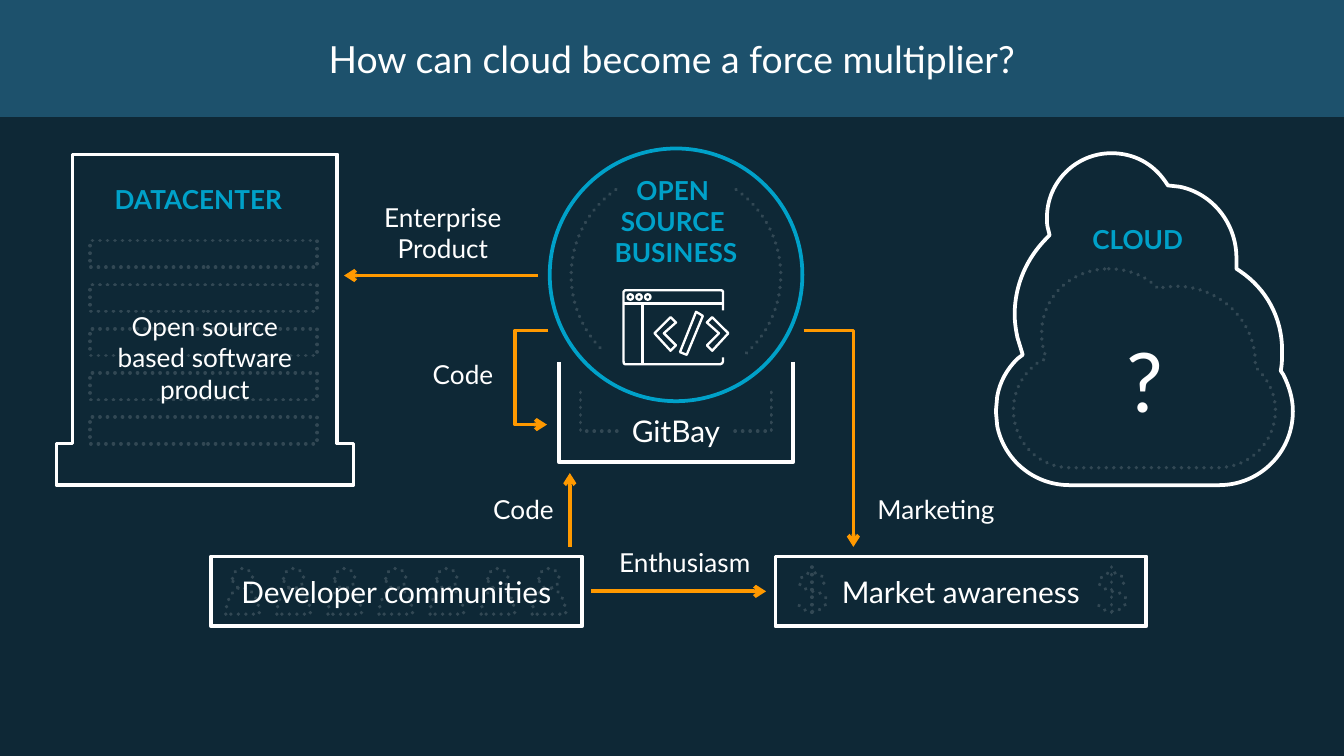
from lxml.etree import SubElement
from pptx import Presentation
from pptx.dml.color import RGBColor
from pptx.enum.dml import MSO_LINE
from pptx.enum.shapes import MSO_CONNECTOR, MSO_SHAPE
from pptx.enum.text import MSO_ANCHOR, PP_ALIGN
from pptx.oxml.ns import qn
from pptx.util import Cm, Pt

COLORS = {
    "background": "0E2836",
    "banner": "1D516C",
    "white": "FFFFFF",
    "blue": "00A1C9",
    "orange": "FF9900",
    "dots": "324854",
}
FONT = "Lato"
DEFAULT_INSETS = (0.1, 0.05, 0.1, 0.05)

# Outlines: a pair is a corner, six numbers are two controls and an end point.
CLOUD = [
    (8.27, 1.14), (8.44, 1.14, 8.58, 1.22, 8.67, 1.35), (8.69, 1.38), (8.78, 1.39),
    (9.02, 1.44, 9.2, 1.66, 9.2, 1.92), (9.2, 2), (9.23, 2.02),
    (9.42, 2.15, 9.54, 2.36, 9.54, 2.61), (9.54, 2.66, 9.54, 2.71, 9.53, 2.76),
    (9.55, 2.79), (9.59, 2.87, 9.62, 2.96, 9.62, 3.06),
    (9.62, 3.37, 9.37, 3.61, 9.07, 3.61), (7.96, 3.61),
    (7.69, 3.61, 7.47, 3.42, 7.42, 3.17), (7.41, 3.06), (7.42, 2.95),
    (7.44, 2.84, 7.49, 2.75, 7.57, 2.67), (7.61, 2.64), (7.57, 2.51),
    (7.56, 2.46, 7.55, 2.4, 7.55, 2.34), (7.55, 2.12, 7.64, 1.92, 7.79, 1.77),
    (7.81, 1.75), (7.8, 1.71), (7.79, 1.68, 7.79, 1.65, 7.79, 1.62),
    (7.79, 1.35, 8.01, 1.14, 8.27, 1.14),
]
INNER_CLOUD = [
    (8.25, 2), (8.39, 2, 8.52, 2.05, 8.61, 2.14), (8.62, 2.15), (8.63, 2.14),
    (8.67, 2.14, 8.71, 2.13, 8.75, 2.13), (9.08, 2.13, 9.34, 2.39, 9.34, 2.7),
    (9.34, 2.73), (9.36, 2.75), (9.44, 2.83, 9.49, 2.94, 9.49, 3.05),
    (9.49, 3.29, 9.3, 3.48, 9.06, 3.48), (7.96, 3.48),
    (7.73, 3.48, 7.54, 3.29, 7.54, 3.05), (7.54, 2.91, 7.61, 2.78, 7.72, 2.7),
    (7.78, 2.67), (7.78, 2.65), (7.76, 2.6, 7.75, 2.54, 7.75, 2.48),
    (7.75, 2.21, 7.97, 2, 8.25, 2),
]
TOWER = [(0.54, 1.15), (2.51, 1.15), (2.51, 3.3), (2.63, 3.3),
         (2.63, 3.61), (0.42, 3.61), (0.42, 3.3), (0.54, 3.3)]
REPOSITORY = [(5.9, 2.69), (5.9, 3.44), (4.16, 3.44), (4.16, 2.69)]
WINDOW = [
    (5.38, 2.66), (5.38, 2.69), (5.38, 2.7, 5.37, 2.71, 5.36, 2.71), (4.65, 2.71),
    (4.64, 2.71, 4.64, 2.7, 4.64, 2.69), (4.64, 2.17),
    (4.64, 2.16, 4.64, 2.16, 4.65, 2.16), (5.36, 2.16),
    (5.37, 2.16, 5.38, 2.16, 5.38, 2.17), (5.38, 2.31),
]
WINDOW_RULES = [[(4.64, 2.26), (5.38, 2.26)], [(4.78, 2.71), (4.78, 2.26)]]
CODE_SIGNS = [
    [(4.99, 2.61), (4.87, 2.48), (4.99, 2.36), (5.03, 2.4), (4.94, 2.48), (5.03, 2.57)],
    [(5.3, 2.61), (5.26, 2.57), (5.35, 2.48), (5.26, 2.4), (5.3, 2.36), (5.42, 2.48)],
    [(5.11, 2.64), (5.06, 2.62), (5.18, 2.32), (5.23, 2.35)],
]
SHOULDERS = [(0, 0.2), (0, 0.09, 0.06, 0, 0.12, 0), (0.19, 0, 0.25, 0.09, 0.25, 0.2)]
DOLLAR = [
    (0.2, 0.08), (0.2, 0.07, 0.21, 0.01, 0.12, 0), (0.03, 0, 0.02, 0.07, 0.02, 0.08),
    (0.02, 0.08, 0.02, 0.11, 0.06, 0.12), (0.07, 0.13, 0.09, 0.13, 0.11, 0.14),
    (0.19, 0.15, 0.22, 0.17, 0.22, 0.22), (0.21, 0.26, 0.17, 0.28, 0.13, 0.29),
    (0.08, 0.29, 0.01, 0.28, 0, 0.2),
]


def length(units):
    """The layout grid has a unit of 2.54 cm."""
    return Cm(units * 2.54)


def rgb(name):
    return RGBColor.from_string(COLORS[name])


def style_line(shape, color, width=2):
    shape.line.color.rgb = rgb(color)
    shape.line.width = Pt(width)
    if color == "dots":
        shape.line.dash_style = MSO_LINE.ROUND_DOT
        shape.line._get_or_add_ln().set("cap", "rnd")


def write(shape, lines, size, color="white", bold=False, insets=DEFAULT_INSETS,
          anchor=MSO_ANCHOR.MIDDLE, wrap=True):
    frame = shape.text_frame
    frame.word_wrap = wrap
    frame.vertical_anchor = anchor
    (frame.margin_left, frame.margin_top,
     frame.margin_right, frame.margin_bottom) = map(length, insets)
    for index, line in enumerate(lines):
        para = frame.add_paragraph() if index else frame.paragraphs[0]
        para.alignment = PP_ALIGN.CENTER
        for part, text in enumerate(line.split("\n")):
            if part:
                para.add_line_break()
            span = para.add_run()
            span.text = text
            span.font.name = FONT
            span.font.size = Pt(size)
            span.font.bold = bold
            span.font.color.rgb = rgb(color)


def add_preset(page, kind, place, line=None, fill=None, width=2):
    shape = page.shapes.add_shape(kind, *map(length, place))
    shape.shadow.inherit = False
    if fill:
        shape.fill.solid()
        shape.fill.fore_color.rgb = rgb(fill)
    else:
        shape.fill.background()
    if line:
        style_line(shape, line, width)
    else:
        shape.line.fill.background()
    return shape


def add_outline(page, outline, color, width=2, close=True, left=0, top=0):
    """Build a freeform, then bend the segments that have control points."""
    ends = [(length(part[-2] + left), length(part[-1] + top)) for part in outline]
    builder = page.shapes.build_freeform(*ends[0])
    builder.add_line_segments(ends[1:], close=close)
    shape = builder.convert_to_shape()
    segments = list(shape._element.iter(qn("a:lnTo")))
    for segment, part in zip(segments, outline[1:]):
        if len(part) == 6:
            segment.tag = qn("a:cubicBezTo")
            segment.remove(segment[0])
            for x, y in zip(part[::2], part[1::2]):
                SubElement(segment, qn("a:pt"), x=str(length(x + left) - shape.left),
                           y=str(length(y + top) - shape.top))
    shape.shadow.inherit = False
    shape.fill.background()
    style_line(shape, color, width)
    return shape


def add_line(page, start, end, color="orange", preset=None, bend=None):
    """Connect two points; bend is the share of the width where an elbow turns."""
    kind = MSO_CONNECTOR.ELBOW if preset else MSO_CONNECTOR.STRAIGHT
    line = page.shapes.add_connector(kind, *map(length, start + end))
    style_line(line, color)
    properties = line._element.spPr
    if preset:
        geometry = properties.find(qn("a:prstGeom"))
        geometry.set("prst", preset)
        if bend:
            guides = geometry.find(qn("a:avLst"))
            if guides is None:
                guides = SubElement(geometry, qn("a:avLst"))
            SubElement(guides, qn("a:gd"), name="adj1", fmla=f"val {round(bend * 100000)}")
    if color == "orange":
        SubElement(line.line._get_or_add_ln(), qn("a:tailEnd"), type="arrow")
    SubElement(properties, qn("a:effectLst"))


def add_label(page, place, lines, size=14, wrap=False):
    box = page.shapes.add_textbox(*map(length, place))
    write(box, lines, size, anchor=MSO_ANCHOR.TOP, wrap=wrap)


def draw_datacenter(page):
    for row in range(5):
        add_preset(page, MSO_SHAPE.RECTANGLE, (0.67, 1.79 + row * 0.328, 1.69, 0.2), "dots")
    tower = add_outline(page, TOWER, "white")
    write(tower, ["DATACENTER"], 14, "blue", True, (0, 0, 0.1, 1.8))
    add_label(page, (0.71, 2.26, 1.63, 0.81), ["Open source based software product"], wrap=True)


def draw_cloud(page):
    cloud = add_outline(page, CLOUD, "white")
    write(cloud, ["CLOUD"], 14, "blue", True, (0, 0, 0.1, 1.2))
    add_label(page, (7.7, 2.41, 1.64, 0.84), ["?"], 44, wrap=True)
    add_outline(page, INNER_CLOUD, "dots")


def draw_business(page):
    for rule in WINDOW_RULES + [WINDOW]:
        add_outline(page, rule, "white", 1.25, close=False)
    for button in range(3):
        place = (4.67 + button * 0.065, 2.19, 0.04, 0.04)
        add_preset(page, MSO_SHAPE.OVAL, place, "white", width=1.25)
    for sign in CODE_SIGNS:
        add_outline(page, sign, "white", 1.25)
    circle = add_preset(page, MSO_SHAPE.OVAL, (4.09, 1.105, 1.88, 1.88), "blue")
    write(circle, ["OPEN \nSOURCE \nBUSINESS"], 14, "blue", True, (0.1, 0, 0.1, 0.8))
    repository = add_outline(page, REPOSITORY, "white", close=False)
    write(repository, ["GitBay"], 16, insets=(0.1, 0, 0.1, 0.1), anchor=MSO_ANCHOR.BOTTOM)
    for mirrored, end in ((False, 29.24), (True, 26.32)):
        arc = add_preset(page, MSO_SHAPE.ARC, (4.25, 1.27, 1.56, 1.56), "dots")
        arc.adjustments[0], arc.adjustments[1] = 182.99, end
        if mirrored:
            arc._element.spPr.find(qn("a:xfrm")).set("flipH", "1")
    for inner, outer in ((5.47, 5.74), (4.59, 4.32)):
        add_line(page, (inner, 3.21), (outer, 2.88), "dots", preset="bentConnector2")


def draw_audiences(page):
    for person in range(7):
        left = 1.68 + person * 0.38
        add_preset(page, MSO_SHAPE.OVAL, (left + 0.05, 4.23, 0.15, 0.15), "dots")
        add_outline(page, SHOULDERS, "dots", left=left, top=4.37)
    for left, name in ((1.57, "Developer communities"), (5.77, "Market awareness")):
        box = add_preset(page, MSO_SHAPE.RECTANGLE, (left, 4.14, 2.76, 0.52), "white")
        write(box, [name], 16, insets=(0, 0, 0, 0))
    for left in (5.93, 8.16):
        add_outline(page, DOLLAR, "dots", close=False, left=left, top=4.26)
        add_line(page, (left + 0.11, 4.22), (left + 0.11, 4.59), "dots")


def draw_flows(page):
    add_line(page, (4, 2.05), (2.56, 2.05))
    add_line(page, (4.24, 4.07), (4.24, 3.52))
    add_line(page, (4.4, 4.4), (5.7, 4.4))
    add_line(page, (5.98, 2.46), (6.35, 4.07), preset="bentConnector2")
    add_line(page, (4.08, 2.46), (4.07, 3.16), preset="bentConnector3", bend=25)
    add_label(page, (2.74, 1.45, 1.11, 0.57), ["Enterprise", "Product"])
    add_label(page, (3.12, 2.62, 0.65, 0.34), ["Code"])
    add_label(page, (3.57, 3.62, 0.65, 0.34), ["Code"])
    add_label(page, (4.48, 4.02, 1.23, 0.34), ["Enthusiasm"])
    add_label(page, (6.41, 3.62, 1.11, 0.34), ["Marketing"])


def main():
    deck = Presentation()
    deck.slide_width, deck.slide_height = length(10), length(5.625)
    page = deck.slides.add_slide(deck.slide_layouts[6])
    add_preset(page, MSO_SHAPE.RECTANGLE, (0, 0, 10, 5.625), fill="background")
    banner = add_preset(page, MSO_SHAPE.RECTANGLE, (0, 0, 10, 0.87), fill="banner")
    write(banner, ["How can cloud become a force multiplier?"], 20)
    draw_datacenter(page)
    draw_cloud(page)
    draw_business(page)
    draw_audiences(page)
    draw_flows(page)
    deck.save("out.pptx")


if __name__ == "__main__":
    main()
